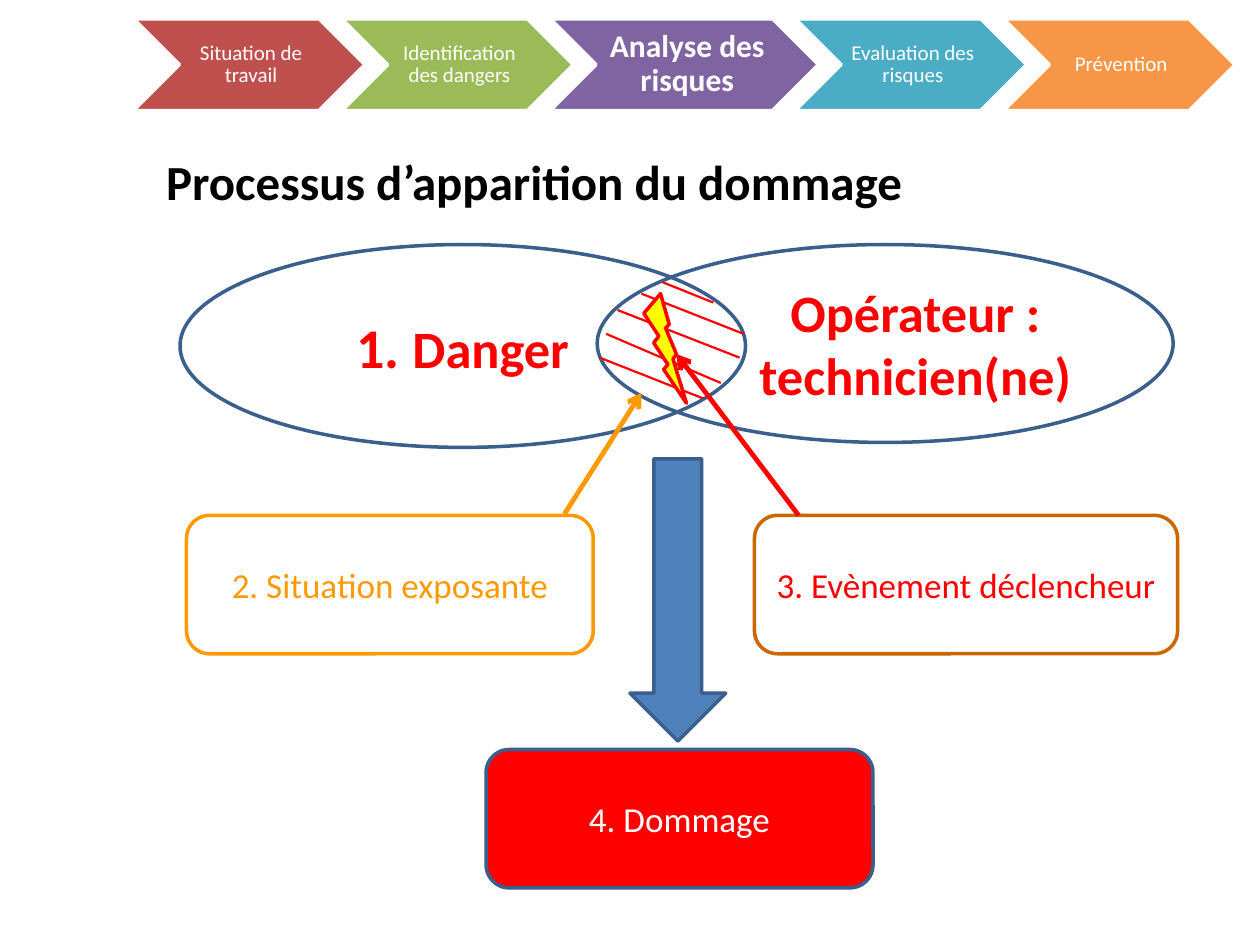
from dataclasses import dataclass, field
from typing import Optional

import pptx
import pptx.dml.color
import pptx.enum.shapes
import pptx.enum.text
import pptx.oxml
import pptx.oxml.ns
import pptx.util

Cm = pptx.util.Cm
Pt = pptx.util.Pt
Kind = pptx.enum.shapes.MSO_SHAPE
Align = pptx.enum.text.PP_ALIGN

FONT = "Calibri"
COLOURS = {
    "white": "FFFFFF", "black": "000000", "brick": "C0504D", "green": "9BBB59",
    "purple": "8064A2", "teal": "4BACC6", "peach": "F79646", "red": "FF0000",
    "yellow": "FFFF00", "orange": "FF9900", "brown": "CC6600",
    "blue": "4F81BD", "navy": "3A5F8C",
}


@dataclass
class Step:
    label: str
    colour: str
    active: bool = False


@dataclass
class Figure:
    kind: int
    left: float
    top: float
    width: float
    height: float
    outline: str
    fill: Optional[str] = None
    text: str = ""
    style: dict = field(default_factory=dict)


@dataclass
class Line:
    start: tuple[float, float]
    end: tuple[float, float]
    colour: str = "red"
    weight: float = 1.25
    arrow: bool = False


STEPS = [
    Step("Situation de travail", "brick"),
    Step("Identification des dangers", "green"),
    Step("Analyse des risques", "purple", active=True),
    Step("Evaluation des risques", "teal"),
    Step("Prévention", "peach"),
]
CIRCLES = [
    Figure(Kind.OVAL, 12.04, 4.93, 11.61, 3.99, "navy",
           text="Opérateur : technicien(ne)",
           style=dict(size=30, colour="red", bold=True, indent=1.22)),
    Figure(Kind.OVAL, 3.63, 4.93, 11.4, 4.09, "navy", text="1. Danger",
           style=dict(size=30, colour="red", bold=True, lead=(3, 32))),
]
HATCHING = [
    Line((12.93, 5.92), (14.99, 6.73)),
    Line((12.45, 6.25), (14.91, 7.21)),
    Line((12.22, 6.73), (14.53, 7.72)),
    Line((12.09, 7.21), (14.17, 8.03)),
    Line((13.36, 5.69), (14.38, 6.1)),
]
BOLT = Figure(Kind.LIGHTNING_BOLT, 12.98, 5.92, 0.86, 2.21, "red", "yellow")
CARDS = [
    Figure(Kind.ROUNDED_RECTANGLE, 3.76, 10.39, 8.2, 2.79, "orange",
           text="2. Situation exposante", style=dict(size=20, colour="orange")),
    Figure(Kind.ROUNDED_RECTANGLE, 15.21, 10.39, 8.53, 2.79, "brown",
           text="3. Evènement déclencheur", style=dict(size=20, colour="red")),
    Figure(Kind.ROUNDED_RECTANGLE, 9.8, 15.11, 7.8, 2.79, "navy", "red",
           text="4. Dommage", style=dict(size=20, colour="white")),
]
POINTERS = [
    Line((11.38, 10.36), (12.93, 7.92), "orange", 2.75, arrow=True),
    Line((16.1, 10.39), (13.64, 7.14), "red", 2.75, arrow=True),
]
DOWN_ARROW = Figure(Kind.DOWN_ARROW, 12.7, 9.25, 1.93, 5.69, "navy", "blue")


def rgb(name: str) -> pptx.dml.color.RGBColor:
    return pptx.dml.color.RGBColor.from_string(COLOURS[name])


def write(frame, text: str, *, size: float, colour: str, bold: bool = False,
          align=Align.CENTER, anchor=pptx.enum.text.MSO_ANCHOR.MIDDLE,
          indent: float = 0, spacing: Optional[float] = None,
          lead: tuple[int, float] = (0, 0)) -> None:
    frame.word_wrap = True
    frame.vertical_anchor = anchor
    para = frame.paragraphs[0]
    para.alignment = align
    if spacing:
        para.line_spacing = spacing
    if indent:
        properties = para._p.get_or_add_pPr()
        properties.set("marL", str(Cm(indent)))
        properties.set("indent", "0")
    count, lead_size = lead
    for part, points in ((text[:count], lead_size), (text[count:], size)):
        if part:
            span = para.add_run()
            span.text = part
            span.font.name = FONT
            span.font.size = Pt(points)
            span.font.bold = bold
            span.font.color.rgb = rgb(colour)


def draw_figure(page, figure: Figure):
    shape = page.shapes.add_shape(figure.kind, Cm(figure.left), Cm(figure.top),
                                  Cm(figure.width), Cm(figure.height))
    shape.shadow.inherit = False
    if figure.fill:
        shape.fill.solid()
        shape.fill.fore_color.rgb = rgb(figure.fill)
    else:
        shape.fill.background()
    shape.line.color.rgb = rgb(figure.outline)
    shape.line.width = Pt(2)
    if figure.text:
        write(shape.text_frame, figure.text, **figure.style)
    return shape


def draw_line(page, line: Line) -> None:
    connector = page.shapes.add_connector(
        pptx.enum.shapes.MSO_CONNECTOR.STRAIGHT,
        *(Cm(value) for value in line.start + line.end))
    connector.line.color.rgb = rgb(line.colour)
    connector.line.width = Pt(line.weight)
    if line.arrow:
        tail = pptx.oxml.parse_xml(
            f'<a:tailEnd {pptx.oxml.ns.nsdecls("a")} type="arrow"/>')
        connector.line._get_or_add_ln().append(tail)
    connector._element.spPr.append(pptx.oxml.parse_xml(
        f'<a:effectLst {pptx.oxml.ns.nsdecls("a")}/>'))


def draw_steps(page, steps: list[Step]) -> None:
    left, overlap = 2.69, 0.47
    for step in steps:
        width, size, inset = (5.41, 18, 0.08) if step.active else (4.67, 12, 0.05)
        chevron = draw_figure(page, Figure(
            Kind.CHEVRON, left, 0.38, width, 1.85, "white", step.colour, step.label,
            dict(size=size, colour="white", bold=step.active, spacing=0.9)))
        frame = chevron.text_frame
        frame.margin_left = Cm(2.5 * inset)
        frame.margin_right = frame.margin_top = frame.margin_bottom = Cm(inset)
        left += width - overlap


def main() -> None:
    deck = pptx.Presentation()
    deck.slide_width, deck.slide_height = Cm(25.4), Cm(19.05)
    page = deck.slides.add_slide(deck.slide_layouts[6])
    draw_steps(page, STEPS)
    box = page.shapes.add_textbox(Cm(3.1), Cm(2.92), Cm(18.01), Cm(1.45))
    write(box.text_frame, "Processus d’apparition du dommage", size=28,
          colour="black", bold=True, align=Align.LEFT,
          anchor=pptx.enum.text.MSO_ANCHOR.TOP)
    for circle in CIRCLES:
        draw_figure(page, circle)
    for line in HATCHING:
        draw_line(page, line)
    for figure in [BOLT, *CARDS]:
        draw_figure(page, figure)
    for pointer in POINTERS:
        draw_line(page, pointer)
    draw_figure(page, DOWN_ARROW)
    deck.save("out.pptx")


if __name__ == "__main__":
    main()
